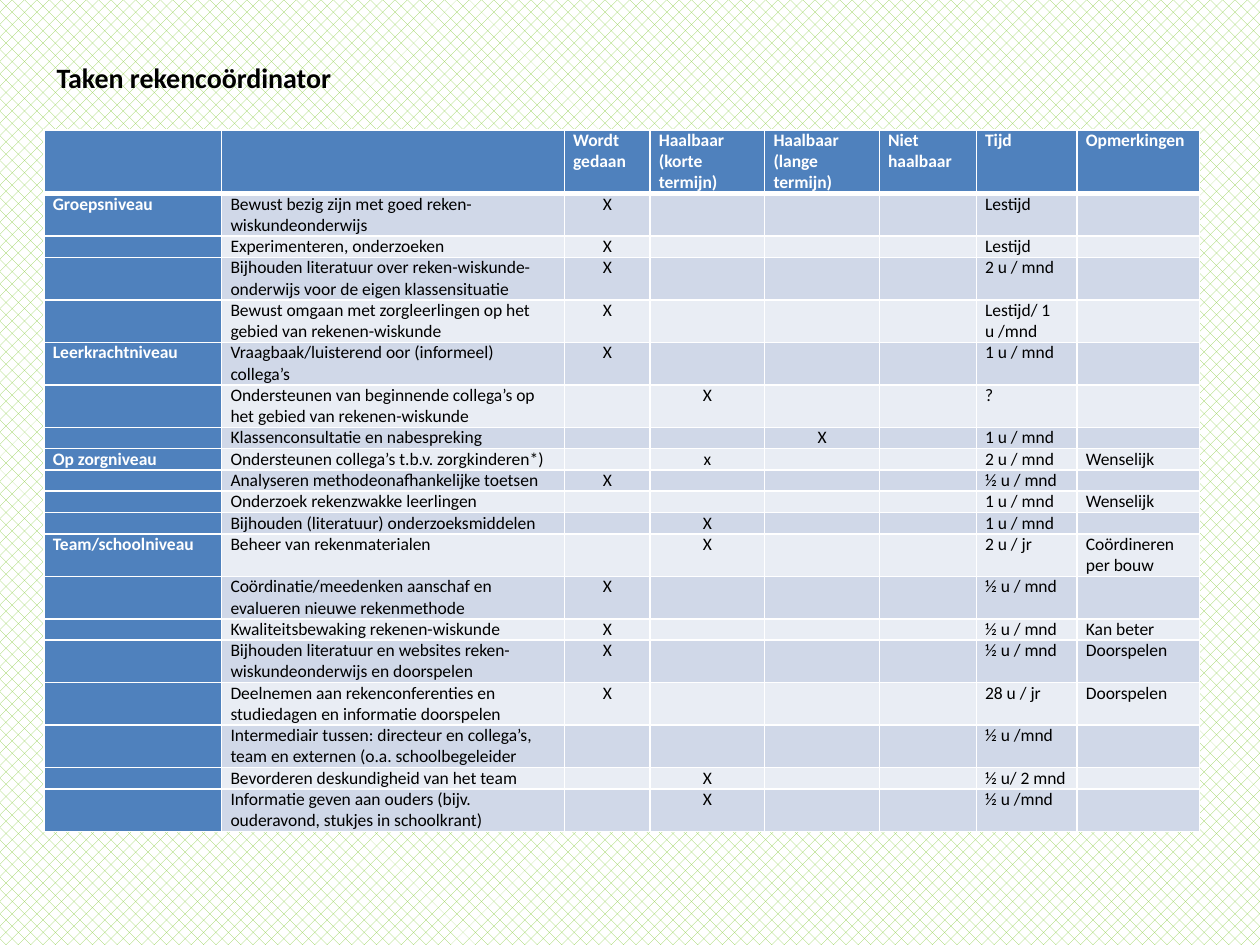
from dataclasses import dataclass

from lxml.etree import SubElement
from pptx import Presentation
from pptx.dml.color import RGBColor
from pptx.enum.dml import MSO_PATTERN
from pptx.enum.text import MSO_ANCHOR, PP_ALIGN
from pptx.oxml.ns import qn
from pptx.util import Inches, Pt


@dataclass(frozen=True)
class Theme:
    """Colours, type and line sizes of the page."""
    font: str = "Calibri"
    title_size: int = 16
    cell_size: int = 10
    thin: int = 1
    thick: int = 3
    pattern: str = "92D050"
    white: str = "FFFFFF"
    black: str = "000000"
    header: str = "4F81BD"
    bands: tuple = ("E9EDF4", "D0D8E8")


THEME = Theme()
COLUMN_WIDTHS = (1.41, 2.72, 0.68, 0.91, 0.91, 0.77, 0.8, 0.97)
MARK_COLUMNS = range(2, 6)
LINE_HEIGHT = 0.15
CELL_INSET = 0.07
TASK_LINE_LENGTH = 45
REMARK_LINE_LENGTH = 12
HEADINGS = ("", "", "Wordt gedaan", "Haalbaar (korte termijn)", "Haalbaar (lange termijn)",
            "Niet haalbaar", "Tijd", "Opmerkingen")
DONE, SHORT_TERM, LONG_TERM = ("X", "", "", ""), ("", "X", "", ""), ("", "", "X", "")
SHORT_TERM_LOWER, UNMARKED = ("", "x", "", ""), ("", "", "", "")
TASKS = {
    "Groepsniveau": [
        ("Bewust bezig zijn met goed reken-wiskundeonderwijs", DONE, "Lestijd", ""),
        ("Experimenteren, onderzoeken", DONE, "Lestijd", ""),
        ("Bijhouden literatuur over reken-wiskunde-onderwijs voor de eigen klassensituatie",
         DONE, "2 u / mnd", ""),
        ("Bewust omgaan met zorgleerlingen op het gebied van rekenen-wiskunde",
         DONE, "Lestijd/ 1 u /mnd", ""),
    ],
    "Leerkrachtniveau": [
        ("Vraagbaak/luisterend oor (informeel) collega’s", DONE, "1 u / mnd", ""),
        ("Ondersteunen van beginnende collega’s op het gebied van rekenen-wiskunde",
         SHORT_TERM, "?", ""),
        ("Klassenconsultatie en nabespreking", LONG_TERM, "1 u / mnd", ""),
    ],
    "Op zorgniveau": [
        ("Ondersteunen collega’s t.b.v. zorgkinderen*)", SHORT_TERM_LOWER, "2 u / mnd", "Wenselijk"),
        ("Analyseren methodeonafhankelijke toetsen", DONE, "½ u / mnd", ""),
        ("Onderzoek rekenzwakke leerlingen", UNMARKED, "1 u / mnd", "Wenselijk"),
        ("Bijhouden (literatuur) onderzoeksmiddelen", SHORT_TERM, "1 u / mnd", ""),
    ],
    "Team/schoolniveau": [
        ("Beheer van rekenmaterialen", SHORT_TERM, "2 u / jr", "Coördineren per bouw"),
        ("Coördinatie/meedenken aanschaf en evalueren nieuwe rekenmethode", DONE, "½ u / mnd", ""),
        ("Kwaliteitsbewaking rekenen-wiskunde", DONE, "½ u / mnd", "Kan beter"),
        ("Bijhouden literatuur en websites reken-wiskundeonderwijs en doorspelen",
         DONE, "½ u / mnd", "Doorspelen"),
        ("Deelnemen aan rekenconferenties en studiedagen en informatie doorspelen",
         DONE, "28 u / jr", "Doorspelen"),
        ("Intermediair tussen: directeur en collega’s, team en externen (o.a. schoolbegeleider",
         UNMARKED, "½ u /mnd", ""),
        ("Bevorderen deskundigheid van het team", SHORT_TERM, "½ u/ 2 mnd", ""),
        ("Informatie geven aan ouders (bijv. ouderavond, stukjes in schoolkrant)",
         SHORT_TERM, "½ u /mnd", ""),
    ],
}


def table_rows():
    """Return the heading row and one row for each task."""
    rows = [HEADINGS]
    for level, tasks in TASKS.items():
        for index, (task, marks, time, remark) in enumerate(tasks):
            rows.append(("" if index else level, task, *marks, time, remark))
    return rows


def format_span(span, size, color, bold):
    """Set the type of one run."""
    span.font.name = THEME.font
    span.font.size = Pt(size)
    span.font.bold = bold
    span.font.color.rgb = RGBColor.from_string(color)


def add_borders(cell, row):
    """Draw white cell borders, with a thick rule under the heading row."""
    properties = cell._tc.get_or_add_tcPr()
    for side in "LRTB":
        under_heading = (side, row) in (("B", 0), ("T", 1))
        width = Pt(THEME.thick if under_heading else THEME.thin)
        line = SubElement(properties, qn(f"a:ln{side}"), w=str(width))
        SubElement(SubElement(line, qn("a:solidFill")), qn("a:srgbClr"), val=THEME.white)


def fill_cell(cell, text, row, column):
    """Write and format one table cell."""
    is_heading = row == 0 or column == 0
    add_borders(cell, row)
    cell.fill.solid()
    cell.fill.fore_color.rgb = RGBColor.from_string(THEME.header if is_heading else THEME.bands[row % 2])
    cell.margin_left = cell.margin_right = Inches(CELL_INSET)
    cell.margin_top = cell.margin_bottom = 0
    para = cell.text_frame.paragraphs[0]
    para.text = text
    if row and column in MARK_COLUMNS:
        para.alignment = PP_ALIGN.CENTER
    for span in para.runs:
        format_span(span, THEME.cell_size, THEME.white if is_heading else THEME.black, is_heading)
    if not text:
        SubElement(para._p, qn("a:endParaRPr"), sz=str(THEME.cell_size * 100))


def line_count(row):
    """Return the number of text lines a row is planned for."""
    is_long = len(row[1]) > TASK_LINE_LENGTH or len(row[-1]) > REMARK_LINE_LENGTH
    return 2 if row is HEADINGS or is_long else 1


def add_task_table(page, left, top, width, height):
    """Place the table of tasks in the given box."""
    rows = table_rows()
    table = page.shapes.add_table(len(rows), len(HEADINGS), left, top, width, height).table
    for column, column_width in zip(table.columns, COLUMN_WIDTHS):
        column.width = Inches(column_width)
    for row_index, row in enumerate(rows):
        table.rows[row_index].height = Inches(LINE_HEIGHT * line_count(row))
        for column_index, text in enumerate(row):
            fill_cell(table.cell(row_index, column_index), text, row_index, column_index)


def add_title(page, left, top, width, height):
    """Place the page title in the given box."""
    box = page.shapes.add_textbox(left, top, width, height)
    frame = box.text_frame
    frame.text = "Taken rekencoördinator"
    frame.word_wrap = False
    frame.vertical_anchor = MSO_ANCHOR.TOP
    format_span(frame.paragraphs[0].runs[0], THEME.title_size, THEME.black, True)


def set_background(page):
    """Give the page its light dotted pattern."""
    fill = page.background.fill
    fill.patterned()
    fill.pattern = MSO_PATTERN.PERCENT_30
    fill.fore_color.rgb = RGBColor.from_string(THEME.pattern)
    fill.back_color.rgb = RGBColor.from_string(THEME.white)


def main():
    """Build the deck and save it."""
    deck = Presentation()
    deck.slide_width, deck.slide_height = Inches(10), Inches(7.5)
    page = deck.slides.add_slide(deck.slide_layouts[6])
    set_background(page)
    add_task_table(page, Inches(0.35), Inches(1.03), Inches(9.16), Inches(5.5))
    add_title(page, Inches(0.35), Inches(0.43), Inches(2.41), Inches(0.67))
    deck.save("out.pptx")


if __name__ == "__main__":
    main()
